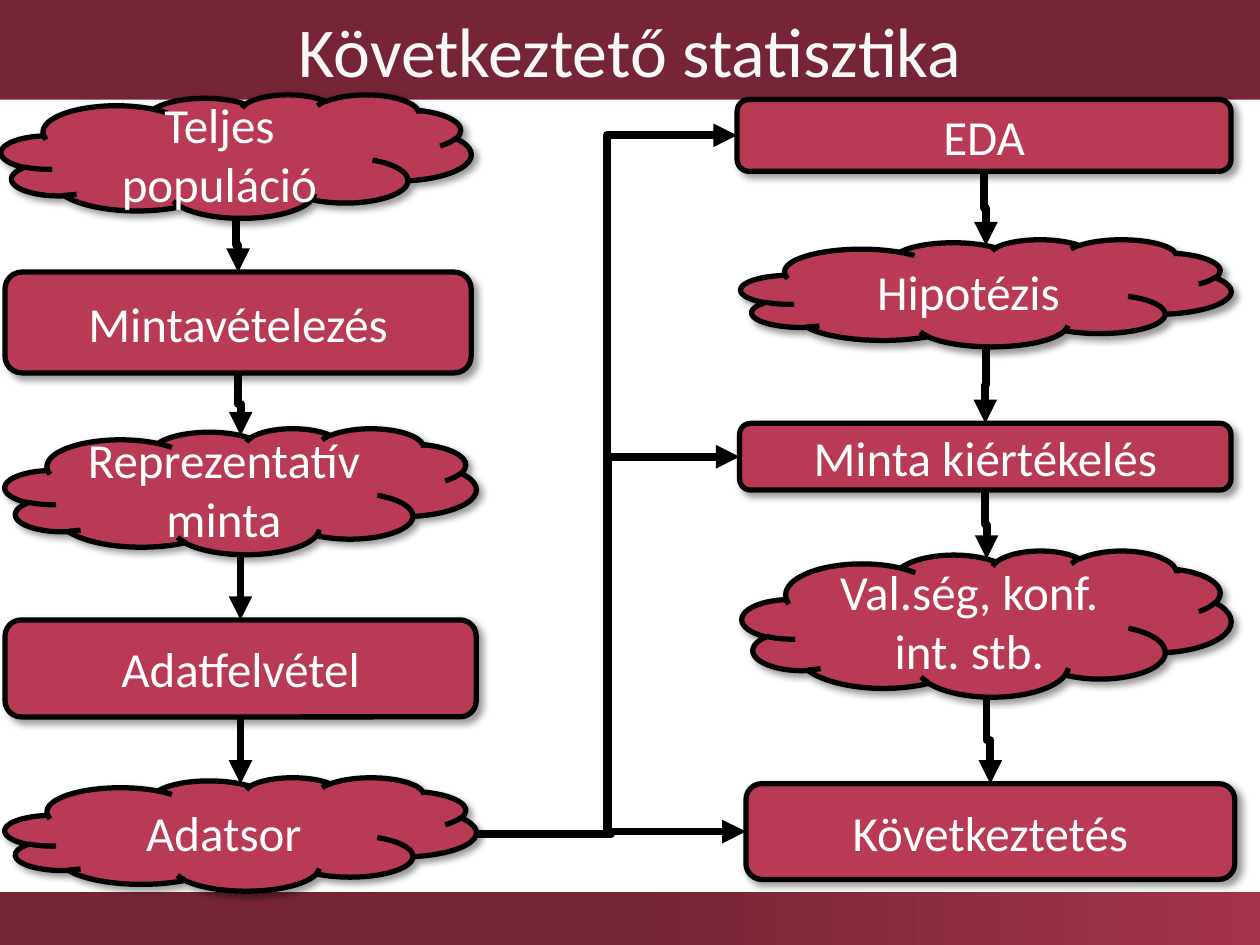
from copy import deepcopy

from lxml.etree import SubElement
from pptx import Presentation
from pptx.dml.color import RGBColor
from pptx.enum.shapes import MSO_CONNECTOR, MSO_SHAPE as SHAPE
from pptx.enum.text import MSO_ANCHOR, PP_ALIGN
from pptx.oxml.ns import qn
from pptx.util import Inches, Pt

WIDTH, HEIGHT = 10, 7.5
FONT = "Calibri"
DARK, LIGHT, BOX = "762536", "A3334B", "B83A55"
BLACK, WHITE, TITLE_COLOR = "000000", "FFFFFF", "F8F8F8"
TITLE_HEIGHT, FOOTER_HEIGHT = 0.79, 0.42
CLOUD_TOP = 0.057  # share of a cloud's height above its top connection site

STEP, STATE = SHAPE.ROUNDED_RECTANGLE, SHAPE.CLOUD
SITES = {STEP: {"top": 0, "left": 1, "bottom": 2, "right": 3},
         STATE: {"right": 0, "bottom": 1, "left": 2, "top": 3}}

# text, kind, (left, top, width, height)
SAMPLING = [
    ("Teljes populáció", STATE, (0.01, 0.75, 3.73, 0.98)),
    ("Mintavételezés", STEP, (0.04, 2.16, 3.7, 0.8)),
    ("Reprezentatív minta", STATE, (0.04, 3.4, 3.74, 1)),
    ("Adatfelvétel", STEP, (0.04, 4.92, 3.74, 0.77)),
    ("Adatsor", STATE, (0.04, 6.17, 3.74, 0.9)),
]
INFERENCE = [
    ("EDA", STEP, (5.85, 0.79, 3.92, 0.57)),
    ("Hipotézis", STATE, (5.88, 1.9, 3.89, 0.85)),
    ("Minta kiértékelés", STEP, (5.87, 3.36, 3.9, 0.53)),
    ("Val.ség, konf. int. stb.", STATE, (5.89, 4.37, 3.88, 1.16)),
    ("Következtetés", STEP, (5.92, 6.22, 3.88, 0.76)),
]


def rgb(color):
    return RGBColor.from_string(color)


def add_box(slide, kind, place, fill):
    shape = slide.shapes.add_shape(kind, *map(Inches, place))
    shape.shadow.inherit = False
    shape.fill.solid()
    shape.fill.fore_color.rgb = rgb(fill)
    shape.line.fill.background()
    return shape


def write(shape, text, size, color):
    frame = shape.text_frame
    frame.word_wrap = True
    frame.vertical_anchor = MSO_ANCHOR.MIDDLE
    paragraph = frame.paragraphs[0]
    paragraph.alignment = PP_ALIGN.CENTER
    run = paragraph.add_run()
    run.text = text
    run.font.name, run.font.size = FONT, Pt(size)
    run.font.color.rgb = rgb(color)


def add_footer(slide):
    footer = add_box(slide, SHAPE.RECTANGLE,
                     (0, HEIGHT - FOOTER_HEIGHT, WIDTH, FOOTER_HEIGHT), DARK)
    footer.fill.gradient()
    footer.fill.gradient_angle = 0
    first = footer._element.spPr.find(".//" + qn("a:gs"))
    first.addnext(deepcopy(first))
    stops = footer.fill.gradient_stops
    for stop, position, color in zip(stops, (0, 0.5, 1), (DARK, DARK, LIGHT)):
        stop.position = position
        stop.color.rgb = rgb(color)


def add_soft_shadow(shape):
    effects = shape._element.spPr.find(qn("a:effectLst"))
    shadow = SubElement(effects, qn("a:outerShdw"), blurRad=str(Pt(4)),
                        dist=str(Pt(3)), dir="2700000", algn="tl", rotWithShape="0")
    color = SubElement(shadow, qn("a:srgbClr"), val=BLACK)
    SubElement(color, qn("a:alpha"), val="40000")


def add_node(slide, text, kind, place):
    shape = add_box(slide, kind, place, BOX)
    shape.line.color.rgb = rgb(BLACK)
    shape.line.width = Pt(3)
    add_soft_shadow(shape)
    write(shape, text, 28, WHITE)
    return shape


def site_point(shape, side):
    middle_x = shape.left + shape.width // 2
    middle_y = shape.top + shape.height // 2
    inset = CLOUD_TOP if shape.auto_shape_type == STATE else 0
    return {"top": (middle_x, shape.top + int(inset * shape.height)),
            "bottom": (middle_x, shape.top + shape.height),
            "left": (shape.left, middle_y),
            "right": (shape.left + shape.width, middle_y)}[side]


def turn_downward(connector, start, end):
    """Rotate an elbow so that it leaves and arrives vertically."""
    (x1, y1), (x2, y2) = start, end
    length, jog = y2 - y1, abs(x2 - x1)
    frame = connector._element.spPr.find(qn("a:xfrm"))
    frame.attrib.clear()
    if x2 < x1:
        frame.set("rot", "5400000")
    else:
        frame.set("rot", "16200000")
        frame.set("flipH", "1")
    connector.left = (x1 + x2 - length) // 2
    connector.top = (y1 + y2 - jog) // 2
    connector.width, connector.height = length, jog


def join(slide, source, source_side, target, target_side):
    start, end = site_point(source, source_side), site_point(target, target_side)
    connector = slide.shapes.add_connector(MSO_CONNECTOR.ELBOW, *start, *end)
    connector.begin_connect(source, SITES[source.auto_shape_type][source_side])
    connector.end_connect(target, SITES[target.auto_shape_type][target_side])
    # Cloud sites are numbered differently, so the ends are placed again
    connector.begin_x, connector.begin_y = start
    connector.end_x, connector.end_y = end
    if source_side == "bottom":
        turn_downward(connector, start, end)
    connector.line.color.rgb = rgb(BLACK)
    connector.line.width = Pt(4.5)
    properties = connector._element.spPr
    SubElement(properties.find(qn("a:ln")), qn("a:tailEnd"), type="triangle")
    SubElement(properties, qn("a:effectLst"))


def main():
    presentation = Presentation()
    presentation.slide_width, presentation.slide_height = Inches(WIDTH), Inches(HEIGHT)
    slide = presentation.slides.add_slide(presentation.slide_layouts[6])

    add_footer(slide)
    title = add_box(slide, SHAPE.RECTANGLE, (0, 0, WIDTH, TITLE_HEIGHT), DARK)
    write(title, "Következtető statisztika", 40, TITLE_COLOR)

    sampling, inference = ([add_node(slide, *node) for node in column]
                           for column in (SAMPLING, INFERENCE))
    for column in (sampling, inference):
        for upper, lower in zip(column, column[1:]):
            join(slide, upper, "bottom", lower, "top")
    for step in inference[::2]:
        join(slide, sampling[-1], "right", step, "left")

    presentation.save("out.pptx")


if __name__ == "__main__":
    main()
